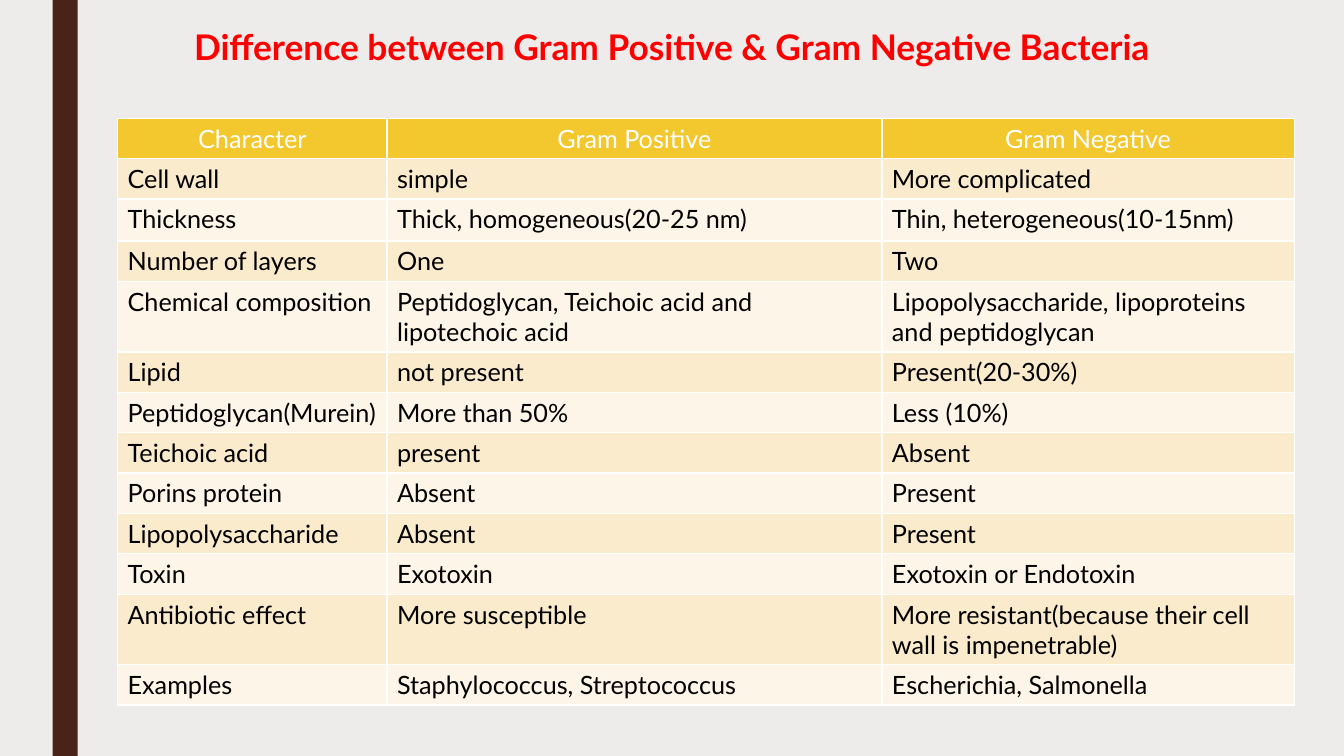
from lxml.etree import SubElement
from pptx import Presentation
from pptx.dml.color import RGBColor
from pptx.enum.shapes import MSO_SHAPE as Shape
from pptx.enum.text import MSO_ANCHOR as Anchor, PP_ALIGN as Align
from pptx.oxml.ns import qn
from pptx.util import Pt

HEADINGS = ("Character", "Gram Positive", "Gram Negative")
TRAITS = [
    ("Cell wall", "simple", "More complicated"),
    ("Thickness", "Thick, homogeneous(20-25 nm)", "Thin, heterogeneous(10-15nm)"),
    ("Number of layers", "One", "Two"),
    ("Chemical composition", "Peptidoglycan, Teichoic acid and lipotechoic acid",
     "Lipopolysaccharide, lipoproteins and peptidoglycan"),
    ("Lipid", "not present", "Present(20-30%)"),
    ("Peptidoglycan(Murein)", "More than 50%", "Less (10%)"),
    ("Teichoic acid", "present", "Absent"),
    ("Porins protein", "Absent", "Present"),
    ("Lipopolysaccharide", "Absent", "Present"),
    ("Toxin", "Exotoxin", "Exotoxin or Endotoxin"),
    ("Antibiotic effect", "More susceptible",
     "More resistant(because their cell wall is impenetrable)"),
    ("Examples", "Staphylococcus, Streptococcus", "Escherichia, Salmonella"),
]
COLUMN_WIDTHS = (192.5, 353.5, 294.5)
ROW_HEIGHT = 28.8
TALL_ROWS = {2: 30, 4: 50.4, 11: 50.4}


def paint(fill, color):
    fill.solid()
    fill.fore_color.rgb = RGBColor.from_string(color)


class SlideBuilder:
    font = "Lato"
    white, black, red = "FFFFFF", "000000", "FF0000"
    header_fill = "F3C82E"
    bands = ("FDF5E8", "FAEBCD")

    def __init__(self, page):
        self.page = page

    def background(self, color):
        paint(self.page.background.fill, color)

    def bar(self, left, top, width, height, color):
        bar = self.page.shapes.add_shape(
            Shape.RECTANGLE, Pt(left), Pt(top), Pt(width), Pt(height))
        bar.shadow.inherit = False
        paint(bar.fill, color)
        bar.line.fill.background()

    def set_text(self, frame, text, size, color, align, bold=False):
        para = frame.paragraphs[0]
        para.add_run().text = text
        para.alignment = align
        para.font.name = self.font
        para.font.size = Pt(size)
        para.font.bold = bold
        paint(para.font.fill, color)

    def title(self, text, left, top, width, height):
        box = self.page.shapes.title
        box.left, box.top, box.width, box.height = map(Pt, (left, top, width, height))
        box.text_frame.word_wrap = True
        box.text_frame.vertical_anchor = Anchor.TOP
        self.set_text(box.text_frame, text, 25.2, self.red, Align.CENTER, bold=True)

    def borders(self, cell):
        properties = cell._tc.get_or_add_tcPr()
        for side in ("lnL", "lnR", "lnT", "lnB"):
            line = SubElement(properties, qn("a:" + side), w=str(Pt(1)))
            fill = SubElement(line, qn("a:solidFill"))
            SubElement(fill, qn("a:srgbClr"), val=self.white)

    def table(self, rows, left, top, widths, heights):
        grid = self.page.shapes.add_table(
            len(rows), len(widths), Pt(left), Pt(top),
            Pt(sum(widths)), Pt(sum(heights))).table
        for column, width in zip(grid.columns, widths):
            column.width = Pt(width)
        for index, (row, texts) in enumerate(zip(grid.rows, rows)):
            row.height = Pt(heights[index])
            heading = index == 0
            for cell, text in zip(row.cells, texts):
                self.borders(cell)
                paint(cell.fill, self.header_fill if heading else self.bands[index % 2])
                self.set_text(cell.text_frame, text, 18,
                              self.white if heading else self.black,
                              Align.CENTER if heading else Align.LEFT)


def main():
    deck = Presentation()
    deck.slide_width, deck.slide_height = Pt(960), Pt(540)
    builder = SlideBuilder(deck.slides.add_slide(deck.slide_layouts[5]))

    # Backdrop
    builder.background("EDECEB")
    builder.bar(37.5, 0, 18, 540, "4A2318")

    # Title
    builder.title("Difference between Gram Positive & Gram Negative Bacteria",
                  77.8, 14.4, 804.2, 56.9)

    # Comparison table
    rows = [HEADINGS, *TRAITS]
    heights = [TALL_ROWS.get(index, ROW_HEIGHT) for index in range(len(rows))]
    builder.table(rows, 84, 84.5, COLUMN_WIDTHS, heights)

    deck.save("out.pptx")


if __name__ == "__main__":
    main()
